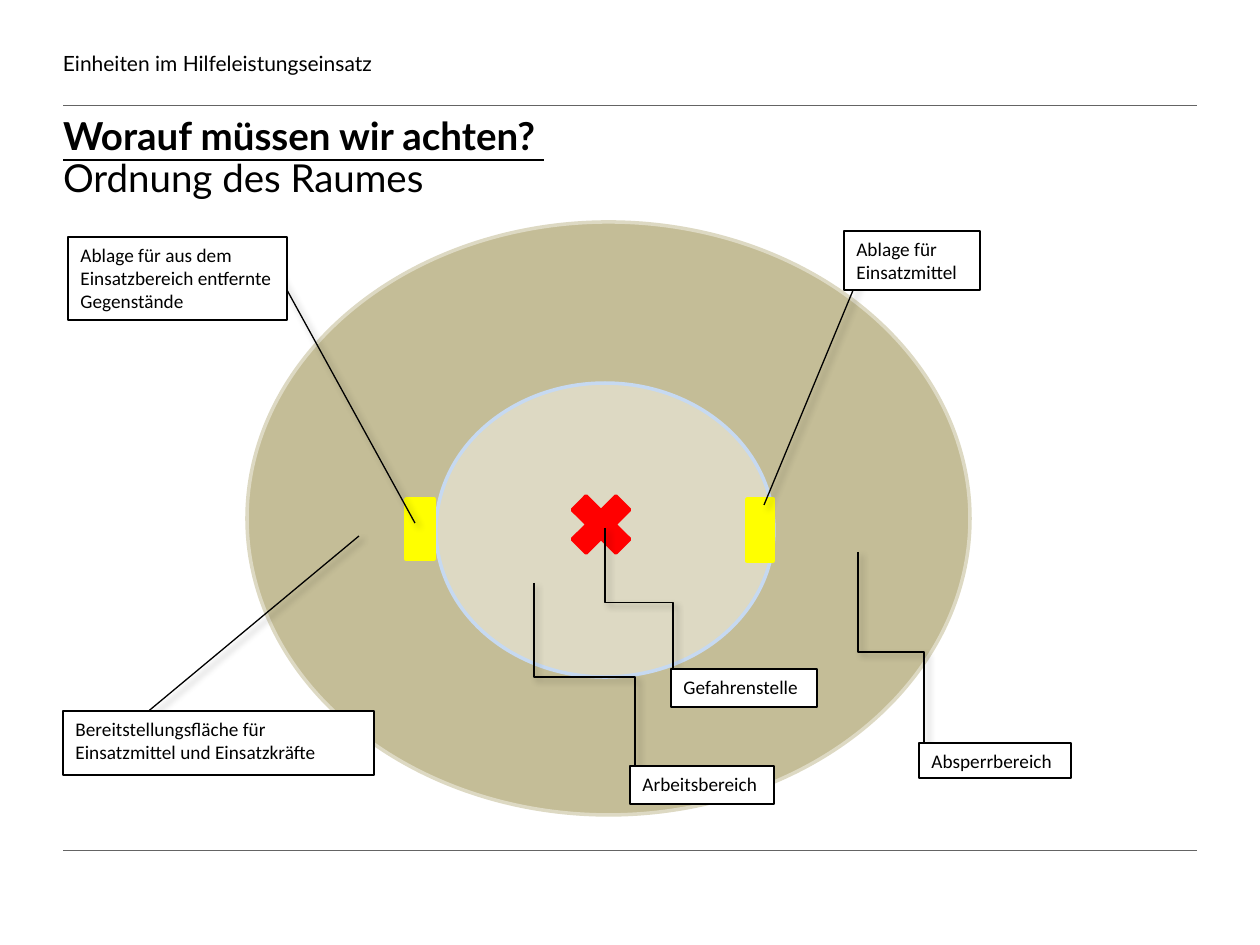
from dataclasses import dataclass

from lxml.etree import SubElement
from pptx import Presentation
from pptx.dml.color import RGBColor
from pptx.enum.shapes import MSO_CONNECTOR, MSO_SHAPE
from pptx.enum.text import MSO_ANCHOR, PP_ALIGN
from pptx.oxml.ns import qn
from pptx.util import Emu, Pt

EMU_PER_PX = 914400 / 126


@dataclass(frozen=True)
class Theme:
    heading_font: str = "Lato"
    label_font: str = "Calibri"
    header_size: int = 12
    title_size: int = 22
    title_spacing: int = 24
    label_size: int = 11
    outline: float = 2
    thin_line: float = 0.75
    rule_line: float = 0.25
    black: str = "000000"
    white: str = "FFFFFF"
    rule: str = "646464"
    outer_zone: str = "C4BD97"
    inner_zone: str = "DDD9C3"
    inner_edge: str = "C6D9F1"
    danger: str = "FF0000"
    storage: str = "FFFF00"


THEME = Theme()


def px(value):
    return Emu(round(value * EMU_PER_PX))


def color(value):
    return RGBColor.from_string(value)


def add_run(paragraph, text, font_name, size, bold=False, underline=False):
    run = paragraph.add_run()
    run.text = text
    run.font.name = font_name
    run.font.size = Pt(size)
    run.font.bold = bold
    run.font.underline = underline
    run.font.color.rgb = color(THEME.black)


def add_text_box(slide, box, anchor):
    """Add a text box without margins and return its first paragraph."""
    frame = slide.shapes.add_textbox(*map(px, box)).text_frame
    frame.word_wrap = True
    frame.vertical_anchor = anchor
    frame.margin_left = frame.margin_right = 0
    frame.margin_top = frame.margin_bottom = 0
    return frame.paragraphs[0]


def add_area(slide, kind, box, fill, line, width=THEME.outline):
    shape = slide.shapes.add_shape(kind, *map(px, box))
    shape.shadow.inherit = False
    shape.fill.solid()
    shape.fill.fore_color.rgb = color(fill)
    shape.line.color.rgb = color(line)
    shape.line.width = Pt(width)
    return shape


def add_label(slide, text, box):
    shape = add_area(slide, MSO_SHAPE.RECTANGLE, box, THEME.white, THEME.black,
                     THEME.thin_line)
    frame = shape.text_frame
    frame.word_wrap = True
    frame.vertical_anchor = MSO_ANCHOR.TOP
    paragraph = frame.paragraphs[0]
    paragraph.alignment = PP_ALIGN.LEFT
    add_run(paragraph, text, THEME.label_font, THEME.label_size)


def add_line(slide, kind, points, line, width):
    """Add a connector and return it with its empty effect list."""
    connector = slide.shapes.add_connector(kind, *map(px, points))
    connector.line.color.rgb = color(line)
    connector.line.width = Pt(width)
    properties = connector._element.spPr
    return connector, SubElement(properties, qn("a:effectLst"))


def add_rule(slide, y):
    add_line(slide, MSO_CONNECTOR.STRAIGHT, (63, y, 1197, y), THEME.rule,
             THEME.rule_line)


def add_leader(slide, kind, points):
    """Add a thin black pointer line with a soft shadow."""
    connector, effects = add_line(slide, kind, points, THEME.black,
                                  THEME.thin_line)
    shadow = SubElement(effects, qn("a:outerShdw"), blurRad=str(Pt(4)),
                        dist=str(Pt(3)), dir="2700000", algn="tl",
                        rotWithShape="0")
    shade = SubElement(shadow, qn("a:srgbClr"), val=THEME.black)
    SubElement(shade, qn("a:alpha"), val="40000")
    return connector


def add_elbow_leader(slide, x1, y1, x2, y2):
    """Add a pointer that leaves and arrives vertically, by a quarter turn."""
    center_x, center_y = (x1 + x2) / 2, (y1 + y2) / 2
    half_run, half_rise = (y2 - y1) / 2, (x2 - x1) / 2
    points = (center_x + half_run, center_y - half_rise,
              center_x - half_run, center_y + half_rise)
    connector = add_leader(slide, MSO_CONNECTOR.ELBOW, points)
    connector._element.spPr.find(qn("a:xfrm")).set("rot", "16200000")


def add_headings(slide):
    add_rule(slide, 105)
    header = add_text_box(slide, (63, 42, 766, 42), MSO_ANCHOR.MIDDLE)
    add_run(header, "Einheiten im Hilfeleistungseinsatz",
            THEME.heading_font, THEME.header_size)
    add_rule(slide, 850)
    title = add_text_box(slide, (63, 116, 903, 100), MSO_ANCHOR.TOP)
    title.line_spacing = Pt(THEME.title_spacing)
    add_run(title, "Worauf müssen wir achten? ", THEME.heading_font,
            THEME.title_size, bold=True, underline=True)
    title.add_line_break()
    add_run(title, "Ordnung des Raumes", THEME.heading_font, THEME.title_size)


def add_zones(slide):
    add_area(slide, MSO_SHAPE.OVAL, (247, 222, 723, 593),
             THEME.outer_zone, THEME.inner_zone)
    add_area(slide, MSO_SHAPE.OVAL, (436, 383, 338, 294),
             THEME.inner_zone, THEME.inner_edge)
    add_area(slide, MSO_SHAPE.MATH_MULTIPLY, (559, 483, 84, 83),
             THEME.danger, THEME.danger)
    for box in ((747, 499, 26, 62), (406, 499, 28, 60)):
        add_area(slide, MSO_SHAPE.RECTANGLE, box, THEME.storage, THEME.storage)


def main():
    presentation = Presentation()
    presentation.slide_width, presentation.slide_height = px(1260), px(945)
    slide = presentation.slides.add_slide(presentation.slide_layouts[6])
    add_headings(slide)
    add_zones(slide)

    for points in ((605, 528, 673, 677), (534, 583, 635, 771),
                   (858, 552, 924, 752)):
        add_elbow_leader(slide, *points)
    for points in ((764, 505, 871, 247), (415, 523, 276, 270),
                   (359, 536, 145, 714)):
        add_leader(slide, MSO_CONNECTOR.STRAIGHT, points)

    labels = (
        ("Ablage für aus dem Einsatzbereich entfernte Gegenstände",
         (68, 237, 219, 83)),
        ("Ablage für Einsatzmittel", (844, 231, 136, 59)),
        ("Gefahrenstelle", (671, 669, 146, 38)),
        ("Arbeitsbereich", (630, 766, 144, 38)),
        ("Absperrbereich", (919, 743, 152, 35)),
        ("Bereitstellungsfläche für Einsatzmittel und Einsatzkräfte",
         (63, 711, 311, 64)),
    )
    for text, box in labels:
        add_label(slide, text, box)
    presentation.save("out.pptx")


if __name__ == "__main__":
    main()
